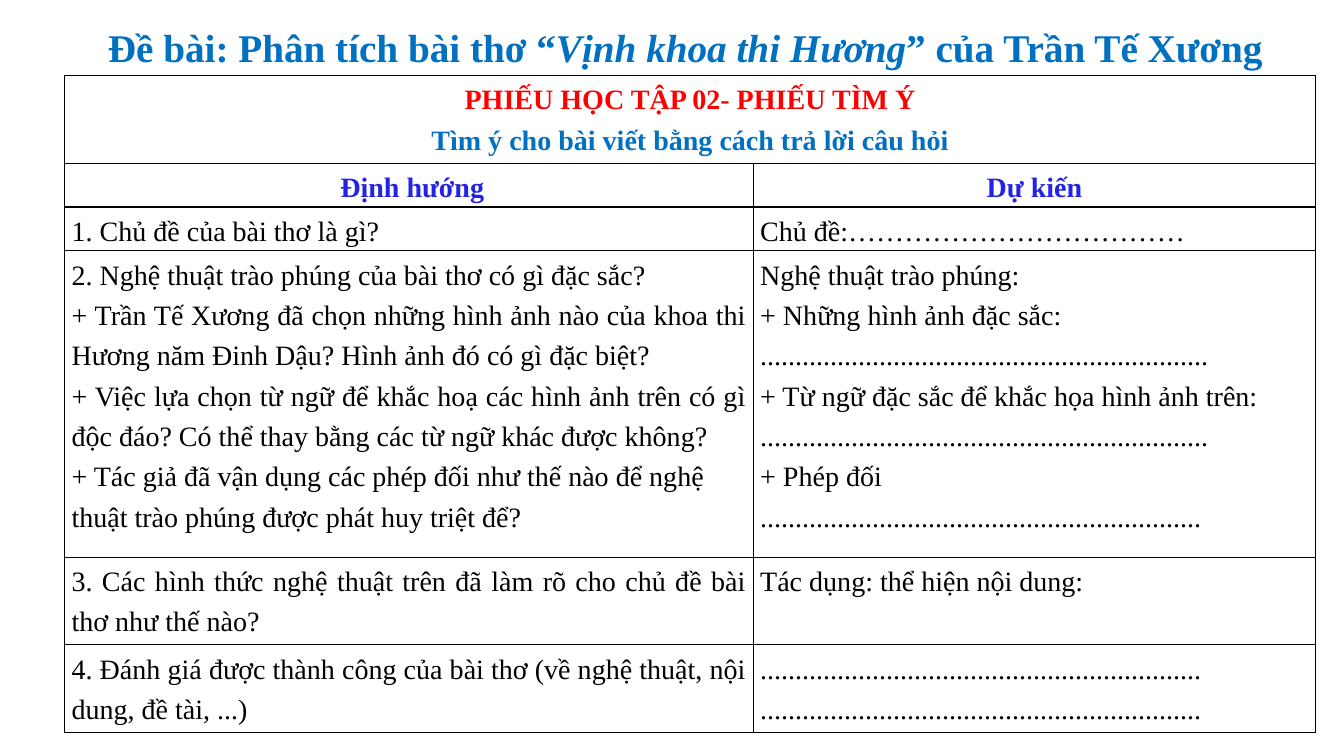
"""Build the worksheet slide for analysing the poem Vịnh khoa thi Hương."""
from lxml import etree
from pptx import Presentation
from pptx.dml.color import RGBColor
from pptx.enum import text
from pptx.oxml import ns
from pptx.util import Inches, Pt

FONT = "Times New Roman"
BLUE = RGBColor(0x00, 0x70, 0xC0)
RED = RGBColor(0xFF, 0x00, 0x00)
INDIGO = RGBColor(0x23, 0x23, 0xE5)
BLACK = RGBColor(0x00, 0x00, 0x00)
WHITE = RGBColor(0xFF, 0xFF, 0xFF)
ALIGN = text.PP_ALIGN

TITLE = [("Đề bài: Phân tích bài thơ “", False),
         ("Vịnh khoa thi Hương", True),
         ("” của Trần Tế Xương", False)]
BANNER = [("PHIẾU HỌC TẬP 02- PHIẾU TÌM Ý", RED),
          ("Tìm ý cho bài viết bằng cách trả lời câu hỏi", BLUE)]
HEADINGS = [" Định hướng", "Dự kiến"]
LONG_DOTS = "." * 64
DOTS = "." * 63
QUESTIONS = [
    (["1. Chủ đề của bài thơ là gì?"],
     ["Chủ đề:………………………………"]),
    (["2. Nghệ thuật trào phúng của bài thơ có gì đặc sắc?",
      "+ Trần Tế Xương đã chọn những hình ảnh nào của khoa thi Hương năm Đinh Dậu? "
      "Hình ảnh đó có gì đặc biệt?",
      "+ Việc lựa chọn từ ngữ để khắc hoạ các hình ảnh trên có gì độc đáo? "
      "Có thể thay bằng các từ ngữ khác được không?",
      "+ Tác giả đã vận dụng các phép đối như thế nào để nghệ thuật trào phúng "
      "được phát huy triệt để?"],
     ["Nghệ thuật trào phúng:", "+ Những hình ảnh đặc sắc:", LONG_DOTS,
      "+ Từ ngữ đặc sắc để khắc họa hình ảnh trên:", LONG_DOTS, "+ Phép đối", DOTS]),
    (["3. Các hình thức nghệ thuật trên đã làm rõ cho chủ đề bài thơ như thế nào?"],
     ["Tác dụng: thể hiện nội dung:"]),
    (["4. Đánh giá được thành công của bài thơ (về nghệ thuật, nội dung, đề tài, ...)"],
     [DOTS, DOTS]),
]
COLUMN_WIDTHS = [6.83, 5.58]
ROW_HEIGHTS = [0.87, 0.43, 0.43, 3.04, 0.87, 0.87]


def style(para, size, color, bold, align):
    """Format one paragraph."""
    para.alignment = align
    para.line_spacing = 1.3
    para.font.name = FONT
    para.font.size = Pt(size)
    para.font.bold = bold
    para.font.color.rgb = color


def fill_cell(cell, lines, bold=False):
    """Write (wording, colour, alignment) lines into a cell."""
    cell.text = "\n".join(wording for wording, _, _ in lines)
    for para, (_, color, align) in zip(cell.text_frame.paragraphs, lines):
        style(para, 20, color, bold, align)


def frame_cell(cell, filled):
    """Set the margins, borders and fill of a cell."""
    cell.margin_left = cell.margin_right = Inches(0.07)
    cell.margin_top = cell.margin_bottom = 0
    props = cell._tc.get_or_add_tcPr()
    for side in ("lnL", "lnR", "lnT", "lnB"):
        line = etree.SubElement(props, ns.qn(f"a:{side}"), w=str(Pt(1)))
        paint = etree.SubElement(line, ns.qn("a:solidFill"))
        etree.SubElement(paint, ns.qn("a:srgbClr"), val=str(BLACK))
    if filled:
        cell.fill.solid()
        cell.fill.fore_color.rgb = WHITE
    else:
        cell.fill.background()


def add_title(page):
    """Place the heading above the table."""
    title = page.shapes.title
    title.left, title.top = Inches(0.97), Inches(0.04)
    title.width, title.height = Inches(11.78), Inches(0.65)
    frame = title.text_frame
    frame.word_wrap = False
    frame.auto_size = text.MSO_AUTO_SIZE.SHAPE_TO_FIT_TEXT
    frame.vertical_anchor = text.MSO_ANCHOR.TOP
    para = frame.paragraphs[0]
    for wording, italic in TITLE:
        span = para.add_run()
        span.text = wording
        span.font.italic = italic
    style(para, 28, BLUE, True, ALIGN.JUSTIFY)


def add_worksheet(page):
    """Add the table of questions and expected answers."""
    table = page.shapes.add_table(
        len(ROW_HEIGHTS), len(COLUMN_WIDTHS), Inches(0.64), Inches(0.75),
        Inches(sum(COLUMN_WIDTHS)), Inches(sum(ROW_HEIGHTS))).table
    for column, width in zip(table.columns, COLUMN_WIDTHS):
        column.width = Inches(width)
    for index, (row, height) in enumerate(zip(table.rows, ROW_HEIGHTS)):
        row.height = Inches(height)
        for cell in row.cells:
            frame_cell(cell, filled=index < 2)
    table.cell(0, 0).merge(table.cell(0, 1))
    fill_cell(table.cell(0, 0), [(w, c, ALIGN.CENTER) for w, c in BANNER], bold=True)
    for col, heading in enumerate(HEADINGS):
        fill_cell(table.cell(1, col), [(heading, INDIGO, ALIGN.CENTER)], bold=True)
    for row, answers in enumerate(QUESTIONS, start=2):
        for col, wordings in enumerate(answers):
            lines = [(wording, BLACK, ALIGN.JUSTIFY) for wording in wordings]
            if col == 1 or len(lines) > 1:
                lines[-1] = (wordings[-1], BLACK, ALIGN.LEFT)
            fill_cell(table.cell(row, col), lines)


def main():
    """Create and save the deck."""
    deck = Presentation()
    deck.slide_width, deck.slide_height = Inches(13.33), Inches(7.5)
    page = deck.slides.add_slide(deck.slide_layouts[5])
    add_title(page)
    add_worksheet(page)
    deck.save("out.pptx")


if __name__ == "__main__":
    main()
